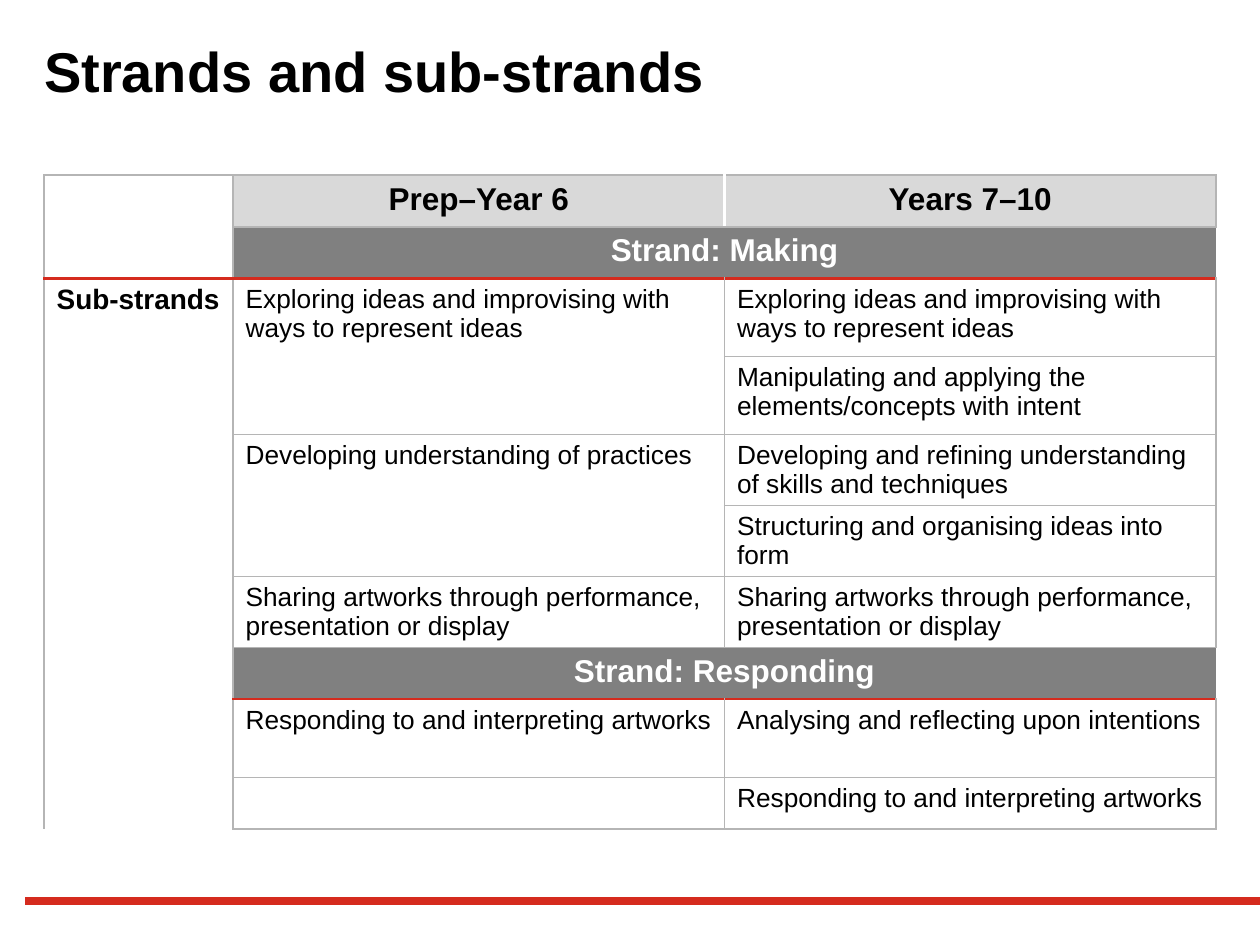
from lxml import etree
from pptx import Presentation
from pptx.dml.color import RGBColor
from pptx.enum.shapes import MSO_CONNECTOR
from pptx.enum.text import MSO_ANCHOR, PP_ALIGN
from pptx.oxml.ns import qn
from pptx.util import Inches, Pt

STRAIGHT = MSO_CONNECTOR.STRAIGHT
MIDDLE = MSO_ANCHOR.MIDDLE
LEFT, CENTER = PP_ALIGN.LEFT, PP_ALIGN.CENTER

FONT = "Arial"
COLORS = {
    "text": "000000",
    "white": "FFFFFF",
    "accent": "D52B1E",
    "header": "D9D9D9",
    "strand": "808080",
    "grid": "B5B5B5",
}
GRID_EDGE = ("grid", 1)
ACCENT_EDGE = ("accent", 1.5)
WHITE_EDGE = ("white", 1.5)

COLUMN_WIDTHS = [1.5, 3.9, 3.9]
ROW_HEIGHTS = [0.41, 0.41, 0.62, 0.62, 0.56, 0.56, 0.56, 0.41, 0.62, 0.41]
STRAND_ROWS = (1, 7)
MERGES = [
    ((0, 0), (1, 0)),
    ((1, 1), (1, 2)),
    ((2, 0), (6, 0)),
    ((2, 1), (3, 1)),
    ((4, 1), (5, 1)),
    ((7, 1), (7, 2)),
    ((8, 0), (9, 0)),
]
CONTENT = [
    ("", "Prep–Year 6", "Years 7–10"),
    ("", "Strand: Making", ""),
    ("Sub-strands",
     "Exploring ideas and improvising with ways to represent ideas",
     "Exploring ideas and improvising with ways to represent ideas"),
    ("", "", "Manipulating and applying the elements/concepts with intent"),
    ("", "Developing understanding of practices",
     "Developing and refining understanding of skills and techniques"),
    ("", "", "Structuring and organising ideas into form"),
    ("", "Sharing artworks through performance, presentation or display",
     "Sharing artworks through performance, presentation or display"),
    ("", "Strand: Responding", ""),
    ("", "Responding to and interpreting artworks",
     "Analysing and reflecting upon intentions"),
    ("", "", "Responding to and interpreting artworks"),
]


def rgb(name):
    return RGBColor.from_string(COLORS[name])


def write_text(frame, text, size=15, bold=False, color="text", align=LEFT):
    para = frame.paragraphs[0]
    para.alignment = align
    span = para.add_run()
    span.text = text
    span.font.name = FONT
    span.font.size = Pt(size)
    span.font.bold = bold
    span.font.color.rgb = rgb(color)


def horizontal_edge(line, column):
    if line == 2 or (line == 8 and column > 0):
        return ACCENT_EDGE
    if column == 0 and line not in (0, len(ROW_HEIGHTS)):
        return None
    if column == 1 and line in (3, 5):
        return None
    return GRID_EDGE


def vertical_edge(line, row):
    if line == 2 and row in STRAND_ROWS:
        return None
    if line == 2 and row == 0:
        return WHITE_EDGE
    return GRID_EDGE


def draw_edge(cell, side, edge):
    properties = cell._tc.get_or_add_tcPr()
    border = etree.SubElement(properties, qn(f"a:ln{side}"))
    if edge is None:
        border.set("w", "0")
        etree.SubElement(border, qn("a:noFill"))
        return
    color, width = edge
    border.set("w", str(Pt(width)))
    fill = etree.SubElement(border, qn("a:solidFill"))
    etree.SubElement(fill, qn("a:srgbClr"), val=COLORS[color])


def format_cell(cell, row, column):
    draw_edge(cell, "L", vertical_edge(column, row))
    draw_edge(cell, "R", vertical_edge(column + 1, row))
    draw_edge(cell, "T", horizontal_edge(row, column))
    draw_edge(cell, "B", horizontal_edge(row + 1, column))

    style, fill = {}, None
    if column == 0:
        style = {"size": 16, "bold": True}
    elif row == 0:
        style = {"size": 18, "bold": True, "align": CENTER}
        fill = "header"
    elif row in STRAND_ROWS:
        style = {"size": 18, "bold": True, "align": CENTER, "color": "white"}
        fill = "strand"

    if fill:
        cell.fill.solid()
        cell.fill.fore_color.rgb = rgb(fill)
    else:
        cell.fill.background()
    if CONTENT[row][column]:
        write_text(cell.text_frame, CONTENT[row][column], **style)


def add_strand_table(page):
    table = page.shapes.add_table(
        len(ROW_HEIGHTS), len(COLUMN_WIDTHS), Inches(0.35), Inches(1.39),
        Inches(sum(COLUMN_WIDTHS)), Inches(sum(ROW_HEIGHTS))).table
    table.first_row = False
    table.horz_banding = False
    for column, width in zip(table.columns, COLUMN_WIDTHS):
        column.width = Inches(width)
    for row, height in zip(table.rows, ROW_HEIGHTS):
        row.height = Inches(height)
    for start, end in MERGES:
        table.cell(*start).merge(table.cell(*end))
    for row in range(len(ROW_HEIGHTS)):
        for column in range(len(COLUMN_WIDTHS)):
            format_cell(table.cell(row, column), row, column)


def add_title(page, text):
    title = page.shapes.title
    title.left, title.top = Inches(0.35), Inches(0.32)
    title.width, title.height = Inches(9.29), Inches(0.48)
    frame = title.text_frame
    frame.margin_left = frame.margin_right = 0
    frame.margin_top = frame.margin_bottom = 0
    frame.vertical_anchor = MIDDLE
    frame.word_wrap = True
    write_text(frame, text, size=32, bold=True)


def add_footer_line(page):
    line = page.shapes.add_connector(
        STRAIGHT, Inches(0.2), Inches(7.15), Inches(10), Inches(7.15))
    line.line.color.rgb = rgb("accent")
    line.line.width = Pt(4.2)
    etree.SubElement(line._element.spPr, qn("a:effectLst"))


def main():
    deck = Presentation()
    deck.slide_width, deck.slide_height = Inches(10), Inches(7.5)
    page = deck.slides.add_slide(deck.slide_layouts[5])
    add_footer_line(page)
    add_title(page, "Strands and sub-strands")
    add_strand_table(page)
    deck.save("out.pptx")


if __name__ == "__main__":
    main()
